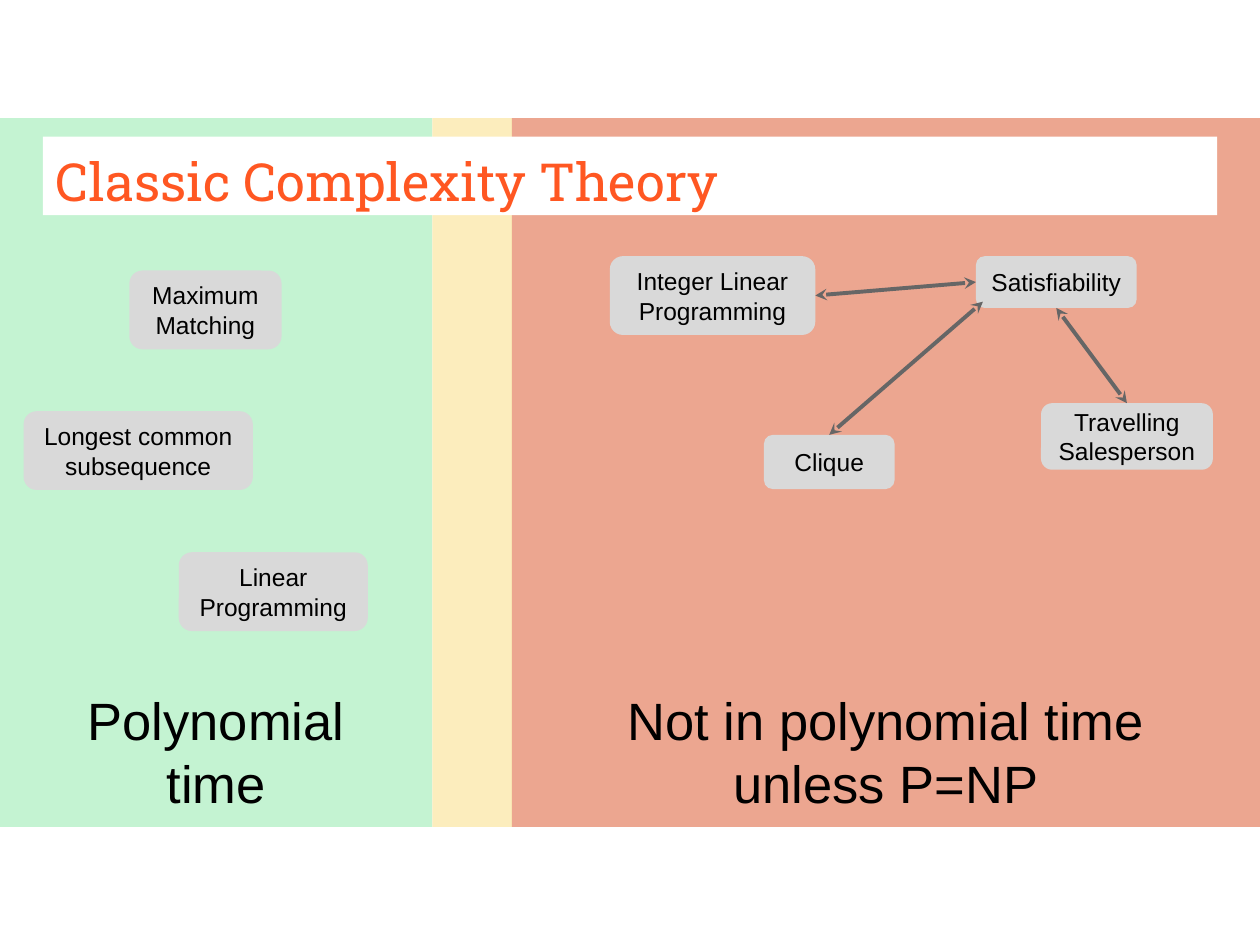
from typing import NamedTuple, Optional

from lxml.etree import SubElement
from pptx import Presentation
from pptx.dml.color import RGBColor
from pptx.enum.shapes import MSO_CONNECTOR, MSO_SHAPE
from pptx.enum.text import MSO_ANCHOR, MSO_AUTO_SIZE, PP_ALIGN
from pptx.oxml.ns import qn
from pptx.util import Pt

GREEN = RGBColor(0x03, 0xCC, 0x40)
YELLOW = RGBColor(0xF4, 0xBE, 0x0C)
RED = RGBColor(0xD8, 0x43, 0x15)
ORANGE = RGBColor(0xFF, 0x57, 0x22)
LIGHT_GRAY = RGBColor(0xD9, 0xD9, 0xD9)
DARK_GRAY = RGBColor(0x66, 0x66, 0x66)
WHITE = RGBColor(0xFF, 0xFF, 0xFF)
BLACK = RGBColor(0, 0, 0)

PANEL_TOP, PANEL_HEIGHT = 67.5, 405
INSET = 7.2
TOP, LEFT, BOTTOM, RIGHT = range(4)


class Panel(NamedTuple):
    left: float
    right: float
    color: RGBColor
    opacity: int
    text: str = ""


class Problem(NamedTuple):
    name: str
    left: float
    top: float
    width: float
    height: float = 45


class Reduction(NamedTuple):
    """Two problems and the sides joined; a fixed end point replaces the end side."""
    begin: str
    begin_side: int
    end: str
    end_side: int
    end_point: Optional[tuple[float, float]] = None


PANELS = [
    Panel(0, 247, GREEN, 23, "Polynomial\vtime"),
    Panel(292.5, 720, RED, 47, "Not in polynomial time\vunless P=NP"),
    Panel(247, 292.5, YELLOW, 27),
]
PROBLEMS = [
    Problem("Satisfiability", 557.7, 146.4, 91.8, 29.6),
    Problem("Travelling\vSalesperson", 594.9, 230.4, 98.2, 38),
    Problem("Clique", 436.5, 248.5, 74.7, 31),
    Problem("Integer Linear Programming", 348.5, 146.4, 117.4),
    Problem("Linear Programming", 102.2, 315.6, 108),
    Problem("Maximum Matching", 73.9, 154.6, 87),
    Problem("Longest common subsequence", 13.5, 235, 131),
]
REDUCTIONS = [
    Reduction("Clique", TOP, "Satisfiability", LEFT, (561.7, 172.4)),
    Reduction("Satisfiability", BOTTOM, "Travelling\vSalesperson", TOP),
    Reduction("Satisfiability", LEFT, "Integer Linear Programming", RIGHT),
]


def write_text(shape, text: str, size: float, anchor: MSO_ANCHOR,
               alignment: PP_ALIGN = PP_ALIGN.CENTER,
               font_name: str = "Arial", color: RGBColor = BLACK) -> None:
    frame = shape.text_frame
    frame.text = text
    frame.word_wrap = True
    frame.auto_size = MSO_AUTO_SIZE.NONE
    frame.vertical_anchor = anchor
    frame.margin_left = frame.margin_right = Pt(INSET)
    frame.margin_top = frame.margin_bottom = Pt(INSET)
    paragraph = frame.paragraphs[0]
    paragraph.alignment = alignment
    paragraph.font.name = font_name
    paragraph.font.size = Pt(size)
    paragraph.font.color.rgb = color


def add_filled_shape(slide, kind: MSO_SHAPE, left: float, top: float,
                     width: float, height: float, color: RGBColor):
    shape = slide.shapes.add_shape(kind, Pt(left), Pt(top), Pt(width), Pt(height))
    shape.shadow.inherit = False
    shape.fill.solid()
    shape.fill.fore_color.rgb = color
    shape.line.fill.background()
    return shape


def add_panel(slide, panel: Panel) -> None:
    shape = add_filled_shape(slide, MSO_SHAPE.RECTANGLE, panel.left, PANEL_TOP,
                             panel.right - panel.left, PANEL_HEIGHT, panel.color)
    color_element = shape._element.spPr.find(qn("a:solidFill"))[0]
    SubElement(color_element, qn("a:alpha"), val=str(panel.opacity * 1000))
    if panel.text:
        write_text(shape, panel.text, 30, MSO_ANCHOR.BOTTOM)


def add_title(slide) -> None:
    title = slide.shapes.title
    title.left, title.top, title.width, title.height = Pt(24.5), Pt(78), Pt(671), Pt(45)
    title.fill.solid()
    title.fill.fore_color.rgb = WHITE
    write_text(title, "Classic Complexity Theory", 30, MSO_ANCHOR.TOP,
               PP_ALIGN.LEFT, "Roboto Slab", ORANGE)
    # Bring the title in front of the panels
    slide.shapes._spTree.append(title._element)


def add_problem(slide, problem: Problem):
    shape = add_filled_shape(slide, MSO_SHAPE.ROUNDED_RECTANGLE, problem.left, problem.top,
                             problem.width, problem.height, LIGHT_GRAY)
    write_text(shape, problem.name, 14, MSO_ANCHOR.MIDDLE)
    return shape


def add_reduction(slide, reduction: Reduction, boxes: dict) -> None:
    end_x, end_y = reduction.end_point or (0, 0)
    connector = slide.shapes.add_connector(MSO_CONNECTOR.STRAIGHT, 0, 0, Pt(end_x), Pt(end_y))
    connector.begin_connect(boxes[reduction.begin], reduction.begin_side)
    if reduction.end_point is None:
        connector.end_connect(boxes[reduction.end], reduction.end_side)
    connector.line.color.rgb = DARK_GRAY
    connector.line.width = Pt(2.25)
    line = connector.line._get_or_add_ln()
    for tag in ("a:headEnd", "a:tailEnd"):
        SubElement(line, qn(tag), type="stealth")
    SubElement(connector._element.spPr, qn("a:effectLst"))


def main() -> None:
    presentation = Presentation()
    presentation.slide_width, presentation.slide_height = Pt(720), Pt(540)
    slide = presentation.slides.add_slide(presentation.slide_layouts[5])
    for panel in PANELS:
        add_panel(slide, panel)
    add_title(slide)
    boxes = {problem.name: add_problem(slide, problem) for problem in PROBLEMS}
    for reduction in REDUCTIONS:
        add_reduction(slide, reduction, boxes)
    presentation.save("out.pptx")


if __name__ == "__main__":
    main()
